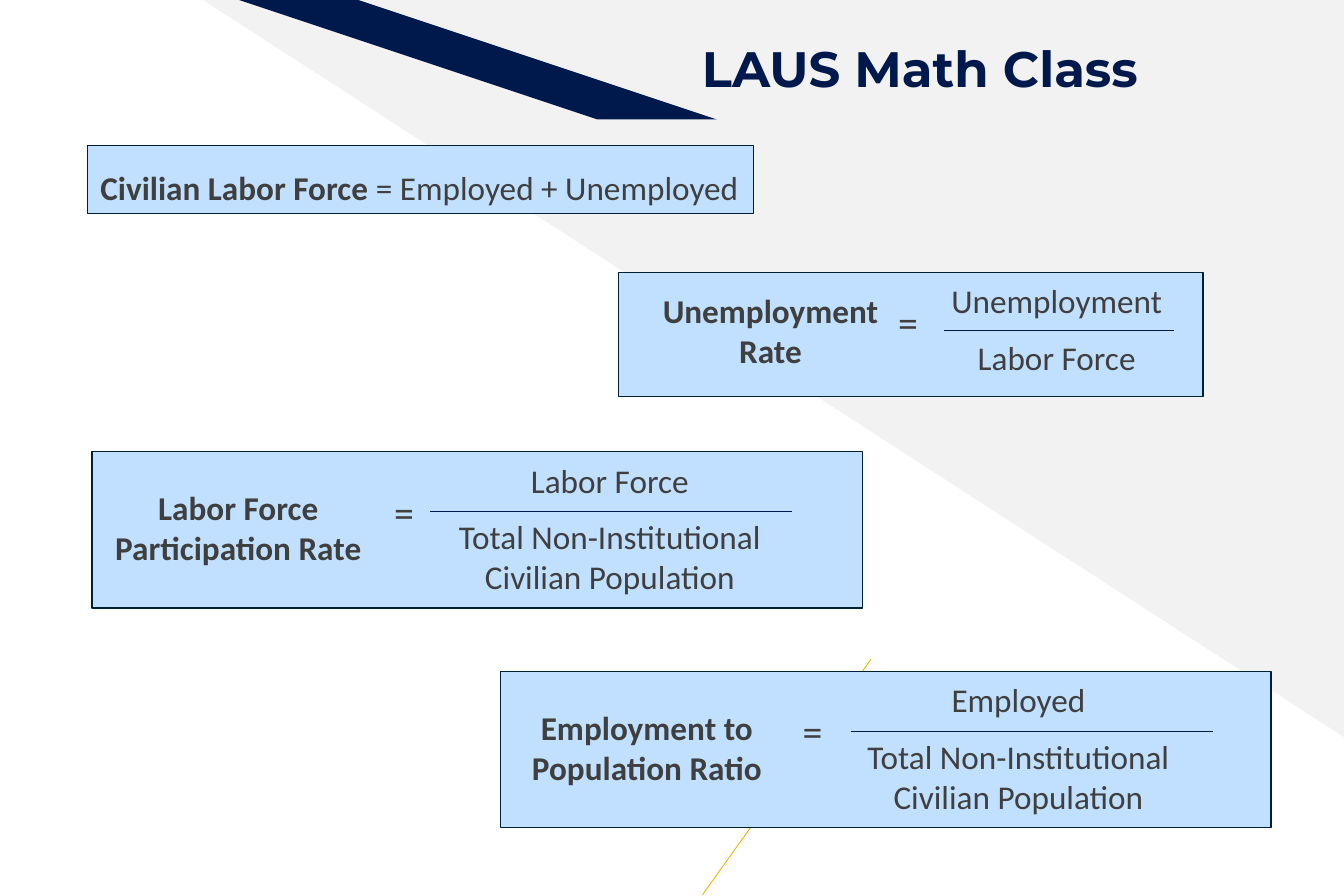
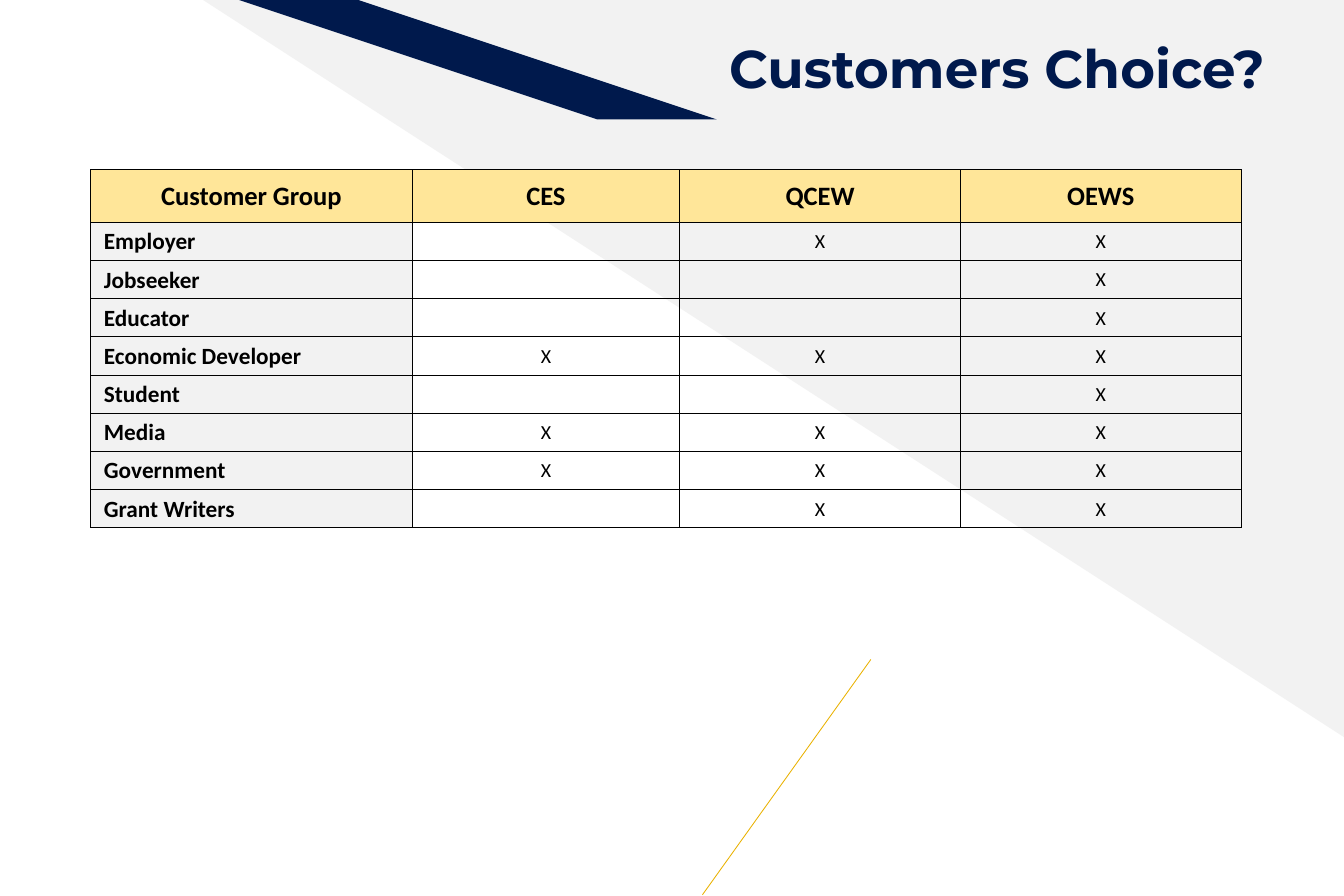
from lxml import etree
from pptx import Presentation
from pptx.dml.color import RGBColor
from pptx.enum.shapes import MSO_CONNECTOR, MSO_SHAPE
from pptx.enum.text import MSO_ANCHOR, MSO_AUTO_SIZE, PP_ALIGN
from pptx.oxml import parse_xml
from pptx.oxml.ns import nsdecls, qn
from pptx.util import Inches, Pt

COLORS = {
    "navy": "00194C",
    "gray": "F2F2F2",
    "gold": "EAB200",
    "panel": "C1E0FF",
    "panel_edge": "002034",
    "text": "3F3F3F",
    "header": "FFE699",
    "black": "000000",
}
BODY_FONT, TITLE_FONT = "Calibri", "Montserrat"


def rgb(name):
    return RGBColor.from_string(COLORS[name])


def inches(values):
    return [Inches(value) for value in values]


def style_font(paragraph, size, color="text", bold=False, name=BODY_FONT):
    font = paragraph.font
    font.name, font.size, font.bold = name, Pt(size), bold
    font.color.rgb = rgb(color)


def set_margins(target, left, top, right, bottom):
    """Set the inner margins of a text frame or a table cell."""
    target.margin_left, target.margin_top = Inches(left), Inches(top)
    target.margin_right, target.margin_bottom = Inches(right), Inches(bottom)


class Deck:
    def __init__(self, width, height):
        self.prs = Presentation()
        self.prs.slide_width, self.prs.slide_height = Inches(width), Inches(height)
        self.layout = self.prs.slide_layouts[5]
        self.slide = None
        self.decorated = False

    def start_slide(self, title, at, size, align):
        self.slide = self.prs.slides.add_slide(self.layout)
        if not self.decorated:
            self.decorate_layout()
        heading = self.slide.shapes.title
        heading.left, heading.top, heading.width, heading.height = inches(at)
        frame = heading.text_frame
        frame.text = title
        frame.word_wrap = True
        frame.auto_size = MSO_AUTO_SIZE.NONE
        frame.vertical_anchor = MSO_ANCHOR.MIDDLE
        set_margins(frame, 0.1, 0.05, 0.1, 0)
        paragraph = frame.paragraphs[0]
        paragraph.alignment, paragraph.line_spacing = align, 0.9
        style_font(paragraph, size, "navy", True, TITLE_FONT)

    def decorate_layout(self):
        """Draw the shared background and move it to the layout of all slides."""
        wedge = self.shape(MSO_SHAPE.RIGHT_TRIANGLE, (1.7, 0, 9.55, 6.17), "gray")
        wedge.rotation = 180
        outline = self.slide.shapes.build_freeform(5.64, 1.43, scale=Inches(1))
        outline.add_line_segments([(3.38, 0), (2.5, 0), (4.73, 1.43)], close=True)
        band = self.paint(outline.convert_to_shape(), "navy")
        accent = self.line((5.88, 7.49), (7.29, 5.52), "gold")
        tree = self.layout.shapes._spTree
        for index, part in enumerate((wedge, band, accent)):
            element = part._element
            element.xpath(".//p:cNvPr")[0].set("id", str(100 + index))
            tree.insert(2 + index, element)
        self.decorated = True

    def paint(self, shape, fill, edge=None):
        shape.shadow.inherit = False
        shape.fill.solid()
        shape.fill.fore_color.rgb = rgb(fill)
        if edge:
            shape.line.color.rgb = rgb(edge)
            shape.line.width = Pt(0.75)
        else:
            shape.line.fill.background()
        return shape

    def shape(self, kind, at, fill, edge=None):
        return self.paint(self.slide.shapes.add_shape(kind, *inches(at)), fill, edge)

    def panel(self, at):
        return self.shape(MSO_SHAPE.RECTANGLE, at, "panel", "panel_edge")

    def line(self, start, end, color):
        line = self.slide.shapes.add_connector(
            MSO_CONNECTOR.STRAIGHT, *inches(start + end))
        line.line.color.rgb = rgb(color)
        line.line.width = Pt(0.5)
        etree.SubElement(line._element.spPr, qn("a:effectLst"))
        return line

    def text(self, at, lines, size=20, bold=False, align=PP_ALIGN.CENTER):
        frame = self.slide.shapes.add_textbox(*inches(at)).text_frame
        frame.word_wrap = True
        for index, content in enumerate(lines):
            paragraph = frame.add_paragraph() if index else frame.paragraphs[0]
            paragraph.text = content
            paragraph.alignment = align
            if index:
                paragraph.space_before = Pt(10)
            style_font(paragraph, size, bold=bold)

    def sum_formula(self, at, name, terms):
        frame = self.panel(at).text_frame
        frame.word_wrap = True
        frame.vertical_anchor = MSO_ANCHOR.TOP
        set_margins(frame, 0.11, 0.18, 0.1, 0.05)
        paragraph = frame.paragraphs[0]
        paragraph.alignment = PP_ALIGN.LEFT
        style_font(paragraph, 20)
        for content, bold in ((name, True), (terms, False)):
            run = paragraph.add_run()
            run.text, run.font.bold = content, bold

    def ratio_formula(self, panel, name, name_at, equals_at, fraction, fraction_at, bar):
        """Draw name = fraction; bar is the left, top and length of its line."""
        self.panel(panel)
        self.text(name_at, [name], bold=True)
        self.text(equals_at + (0.33, 0.5), ["="], size=24, align=PP_ALIGN.LEFT)
        self.text(fraction_at, fraction)
        left, top, length = bar
        self.line((left, top), (left + length, top), "navy")

    def table(self, left, top, widths, heights, rows):
        table = self.slide.shapes.add_table(
            len(rows), len(widths),
            *inches((left, top, sum(widths), sum(heights)))).table
        table.first_row = table.horz_banding = False
        for column, width in zip(table.columns, widths):
            column.width = Inches(width)
        for r, (row, height) in enumerate(zip(rows, heights)):
            table.rows[r].height = Inches(height)
            for c, content in enumerate(row):
                self.cell(table.cell(r, c), content, r == 0, c == 0)

    def cell(self, cell, content, is_header, is_group):
        cell.text = content
        cell.vertical_anchor = MSO_ANCHOR.MIDDLE
        if is_header:
            size, fill = 16, "header"
        elif is_group:
            size, fill = 14, "gray"
        else:
            size, fill = 12, None
        indented = is_group and not is_header
        set_margins(cell, 0.11 if indented else 0.01, 0.01, 0.01, 0)
        paragraph = cell.text_frame.paragraphs[0]
        paragraph.alignment = PP_ALIGN.LEFT if indented else PP_ALIGN.CENTER
        style_font(paragraph, size, "black", is_header or is_group)
        if fill:
            cell.fill.solid()
            cell.fill.fore_color.rgb = rgb(fill)
        else:
            cell.fill.background()
        properties = cell._tc.get_or_add_tcPr()
        for index, side in enumerate(("lnL", "lnR", "lnT", "lnB")):
            properties.insert(index, parse_xml(
                f'<a:{side} {nsdecls("a")} w="{Pt(0.5)}"><a:solidFill>'
                f'<a:srgbClr val="{COLORS["black"]}"/></a:solidFill></a:{side}>'))


def math_slide(deck):
    deck.start_slide("LAUS Math Class", (4.59, 0.23, 6.22, 0.68), 30, PP_ALIGN.CENTER)
    deck.sum_formula((0.73, 1.22, 5.58, 0.57),
                     "Civilian Labor Force ", "= Employed + Unemployed")
    deck.ratio_formula(
        (5.18, 2.28, 4.89, 1.04),
        "Unemployment Rate", (5.41, 2.38, 2.08, 0.77), (7.42, 2.44),
        ["Unemployment", "Labor Force"], (7.75, 2.3, 2.19, 0.91), (7.9, 2.77, 1.93))
    population = "Total Non-Institutional Civilian Population"
    for left, top, name, numerator, bar_left in (
            (0.77, 3.78, "Labor Force Participation Rate", "Labor Force", 3.6),
            (4.19, 5.62, "Employment to Population Ratio", "Employed", 7.12)):
        deck.ratio_formula(
            (left, top, 6.45, 1.31),
            name, (left + 0.06, top + 0.25, 2.33, 0.77), (left + 2.43, top + 0.25),
            [numerator, population], (left + 2.81, top + 0.02, 3.05, 1.25),
            (bar_left, top + 0.5, 3.03))


def customers_slide(deck):
    deck.start_slide("Customers Choice?", (4.05, 0.23, 6.64, 0.68), 32, PP_ALIGN.RIGHT)
    programs = ["CES", "QCEW", "OEWS"]
    choices = {
        "Employer": ["QCEW", "OEWS"],
        "Jobseeker": ["OEWS"],
        "Educator": ["OEWS"],
        "Economic Developer": programs,
        "Student": ["OEWS"],
        "Media": programs,
        "Government": programs,
        "Grant Writers": ["QCEW", "OEWS"],
    }
    rows = [["Customer Group"] + programs]
    for group, chosen in choices.items():
        rows.append([group] + ["X" if p in chosen else "" for p in programs])
    deck.table(0.76, 1.42, [2.69, 2.24, 2.35, 2.35],
               [0.44] + [0.32] * len(choices), rows)


def main():
    deck = Deck(11.25, 7.5)
    math_slide(deck)
    customers_slide(deck)
    deck.prs.save("out.pptx")


if __name__ == "__main__":
    main()
